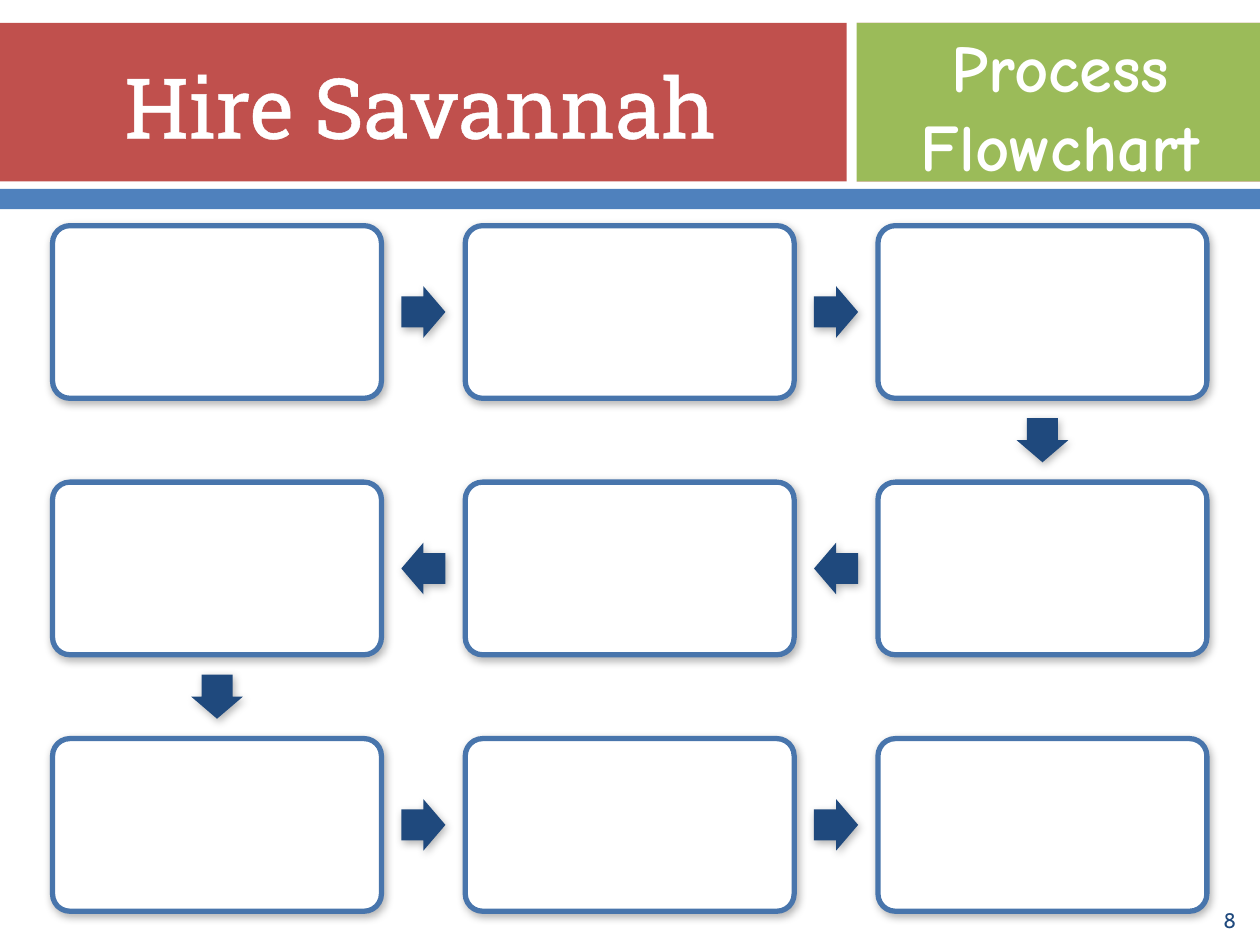
import pptx
import pptx.dml.color
import pptx.enum.shapes
import pptx.enum.text
import pptx.oxml
import pptx.oxml.ns
import pptx.util
from lxml import etree

Cm, Pt = pptx.util.Cm, pptx.util.Pt
RGBColor = pptx.dml.color.RGBColor
MSO_SHAPE = pptx.enum.shapes.MSO_SHAPE
PP_ALIGN = pptx.enum.text.PP_ALIGN
qn = pptx.oxml.ns.qn

WHITE = RGBColor(0xFF, 0xFF, 0xFF)
RED = RGBColor(0xC0, 0x50, 0x4D)
GREEN = RGBColor(0x9B, 0xBB, 0x59)
BLUE = RGBColor(0x4F, 0x81, 0xBD)
BORDER = RGBColor(0x48, 0x75, 0xAC)
NAVY = RGBColor(0x1F, 0x49, 0x7D)

COLS, ROWS = 3, 3
LEFT, TOP = 1.06, 4.55
BOX_W, BOX_H = 6.63, 3.48
PITCH_X, PITCH_Y = 8.32, 5.17
ARROW_W, ARROW_H = 0.89, 1.04

A = 'xmlns:a="http://schemas.openxmlformats.org/drawingml/2006/main"'
SHADOW = (f'<a:effectLst {A}><a:outerShdw blurRad="63500" dist="25400" dir="3600000" '
          'algn="ctr" rotWithShape="0"><a:srgbClr val="000000"><a:alpha val="30000"/>'
          '</a:srgbClr></a:outerShdw></a:effectLst>')
OUTLINE = (f'<a:ln {A} w="13970"><a:solidFill><a:srgbClr val="FFFFFF"/>'
           '</a:solidFill></a:ln>')


def write(tf, text, font, size, color, align=PP_ALIGN.CENTER, bold=False, outline=False):
    tf.word_wrap = True
    tf.auto_size = pptx.enum.text.MSO_AUTO_SIZE.NONE
    tf.vertical_anchor = pptx.enum.text.MSO_ANCHOR.MIDDLE
    p = tf.paragraphs[0]
    p.alignment = align
    p.space_before = Pt(0)
    pPr = p._p.get_or_add_pPr()
    pPr.set("marL", "0")
    pPr.set("indent", "0")
    etree.SubElement(pPr, qn("a:buNone"))
    r = p.add_run()
    r.text = text
    r.font.name, r.font.size, r.font.bold = font, Pt(size), bold
    r.font.color.rgb = color
    if outline:
        r._r.get_or_add_rPr().insert(0, pptx.oxml.parse_xml(OUTLINE))


class FlowSlide:
    title_font = "Roboto Slab"
    label_font = "Comic Neue"
    number_font = "Cabin"

    def __init__(self, prs):
        self.s = prs.slides.add_slide(prs.slide_layouts[1])

    def shape(self, kind, x, y, w, h, fill, line=None, shadow=False):
        sp = self.s.shapes.add_shape(kind, Cm(x), Cm(y), Cm(w), Cm(h))
        sp.fill.solid()
        sp.fill.fore_color.rgb = fill
        if line is None:
            sp.line.fill.background()
        else:
            sp.line.color.rgb = line
            sp.line.width = Pt(3)
        sp.shadow.inherit = False
        if shadow:
            spPr = sp._element.spPr
            spPr.replace(spPr.find(qn("a:effectLst")), pptx.oxml.parse_xml(SHADOW))
        return sp

    def band(self, x, y, w, h, fill):
        self.shape(MSO_SHAPE.RECTANGLE, x, y, w, h, fill)

    def placeholder(self, idx, x, y, w, h, text, **fmt):
        sp = self.s.placeholders[idx]
        sp.left, sp.top, sp.width, sp.height = Cm(x), Cm(y), Cm(w), Cm(h)
        self.s.shapes._spTree.append(sp._element)
        write(sp.text_frame, text, **fmt)

    def label(self, x, y, w, h, text, **fmt):
        sp = self.s.shapes.add_textbox(Cm(x), Cm(y), Cm(w), Cm(h))
        write(sp.text_frame, text, **fmt)

    def box(self, cx, cy):
        sp = self.shape(MSO_SHAPE.ROUNDED_RECTANGLE, cx - BOX_W / 2, cy - BOX_H / 2,
                        BOX_W, BOX_H, WHITE, line=BORDER, shadow=True)
        sp.adjustments[0] = 0.1

    def arrow(self, start, end):
        cx, cy = ((a + b) / 2 for a, b in zip(start, end))
        sp = self.shape(MSO_SHAPE.RIGHT_ARROW, cx - ARROW_W / 2, cy - ARROW_H / 2,
                        ARROW_W, ARROW_H, NAVY, shadow=True)
        sp.adjustments[0], sp.adjustments[1] = 0.6, 0.5
        if end[1] > start[1]:
            sp.rotation = 90
        elif end[0] < start[0]:
            sp.rotation = 180


def step_centres():
    for row in range(ROWS):
        cols = range(COLS) if row % 2 == 0 else reversed(range(COLS))
        for col in cols:
            yield (LEFT + BOX_W / 2 + col * PITCH_X, TOP + BOX_H / 2 + row * PITCH_Y)


def main():
    prs = pptx.Presentation()
    prs.slide_width, prs.slide_height = Cm(25.4), Cm(19.05)
    flow = FlowSlide(prs)

    flow.band(0, 0.46, 25.4, 3.2, RED)
    flow.band(0, 3.81, 25.4, 0.41, BLUE)
    flow.band(17.15, 0.46, 8.25, 3.2, GREEN)
    flow.band(17.07, 0.38, 0.2, 3.38, WHITE)

    flow.placeholder(0, 0, 0.43, 16.94, 3.38, "Hire Savannah",
                     font=flow.title_font, size=48, color=WHITE, outline=True)
    flow.label(19.25, 18.03, 5.92, 1.02, "8", font=flow.number_font, size=12,
               color=NAVY, align=PP_ALIGN.RIGHT)
    flow.placeholder(1, 17.35, 1.07, 8.05, 2.11, "Process Flowchart",
                     font=flow.label_font, size=38, color=WHITE, bold=True)

    previous = None
    for centre in step_centres():
        if previous:
            flow.arrow(previous, centre)
        flow.box(*centre)
        previous = centre

    prs.save("out.pptx")


if __name__ == "__main__":
    main()
